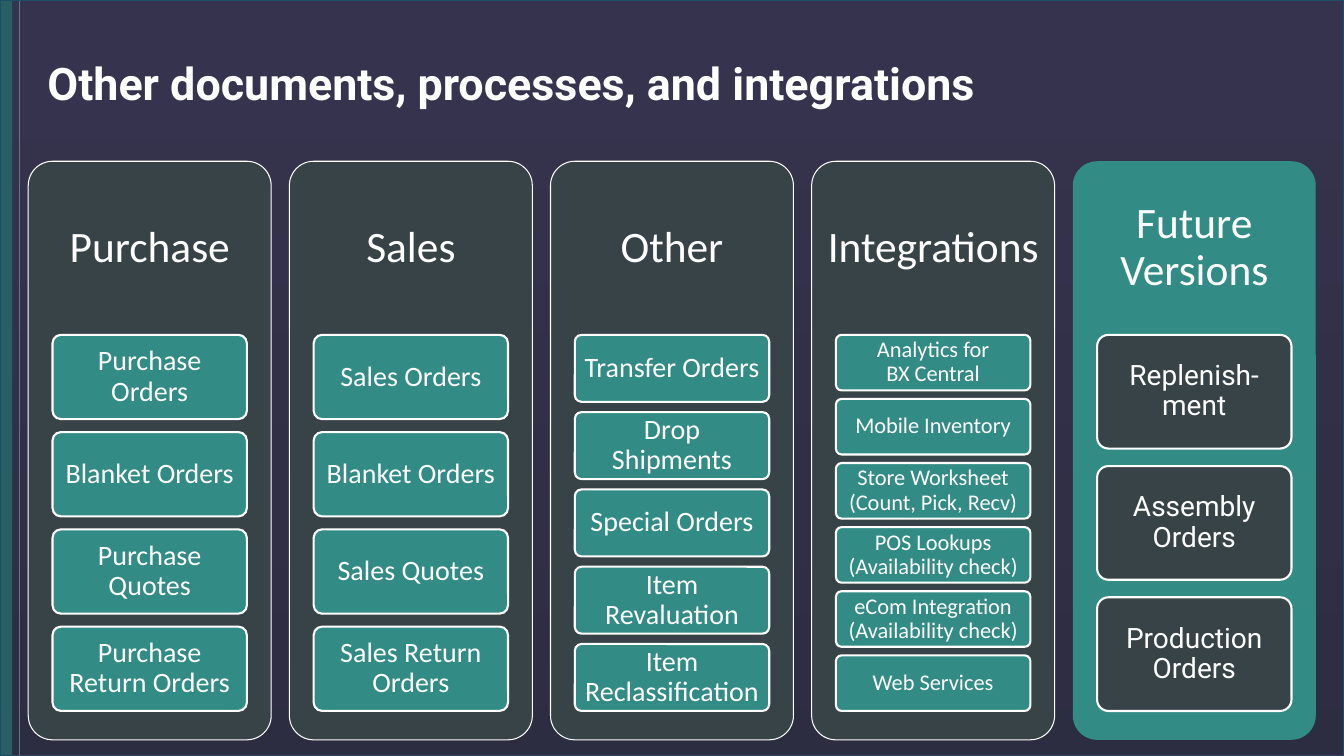
"""Build a slide of five panels listing documents, processes and integrations."""
import lxml.etree
import pptx
import pptx.dml.color
import pptx.enum.dml
import pptx.enum.shapes
import pptx.enum.text
import pptx.oxml.ns
import pptx.util

WIDTH, HEIGHT = 13.33, 7.5
PANEL_LEFT, PANEL_TOP, PANEL_WIDTH, PANEL_HEIGHT = 0.28, 1.6, 2.41, 5.74
PANEL_PITCH = 2.59
HEADING_SHARE = 0.3
STACK_SHARE = 0.65
CARD_SHARE = 0.8
CARD_GAP = 0.154
WHITE, SLATE, TEAL = "FFFFFF", "374347", "328C85"

PANELS = [
    ("Purchase", SLATE, TEAL, "Calibri", 20,
     ["Purchase Orders", "Blanket Orders", "Purchase Quotes",
      "Purchase Return Orders"]),
    ("Sales", SLATE, TEAL, "Calibri", 20,
     ["Sales Orders", "Blanket Orders", "Sales Quotes", "Sales Return Orders"]),
    ("Other", SLATE, TEAL, "Calibri", 20,
     ["Transfer Orders", "Drop Shipments", "Special Orders",
      "Item Revaluation", "Item Reclassification"]),
    ("Integrations", SLATE, TEAL, "Calibri", 16,
     ["Analytics for\vBX Central", "Mobile Inventory",
      "Store Worksheet\v(Count, Pick, Recv)",
      "POS Lookups (Availability check)",
      "eCom Integration (Availability check)", "Web Services"]),
    ("Future Versions", TEAL, SLATE, "Roboto", 20,
     ["Replenish-\vment", "Assembly Orders", "Production Orders"]),
]


def colour(code):
    """Return the colour for a hex string."""
    return pptx.dml.color.RGBColor.from_string(code)


def inches(*lengths):
    """Return the lengths given in inches as slide units."""
    return [pptx.util.Inches(length) for length in lengths]


def write(box, text, font, size, insets=(0.1, 0.05), centred=True, bold=False):
    """Write one white paragraph, centred on the height of a box."""
    frame = box.text_frame
    frame.text = text
    frame.word_wrap = True
    frame.auto_size = pptx.enum.text.MSO_AUTO_SIZE.NONE
    frame.vertical_anchor = pptx.enum.text.MSO_ANCHOR.MIDDLE
    frame.margin_left = frame.margin_right = pptx.util.Inches(insets[0])
    frame.margin_top = frame.margin_bottom = pptx.util.Inches(insets[1])
    para = frame.paragraphs[0]
    align = pptx.enum.text.PP_ALIGN
    para.alignment = align.CENTER if centred else align.LEFT
    para.line_spacing = 0.9
    for span in para.runs:
        span.font.name = font
        span.font.size = pptx.util.Pt(size)
        span.font.bold = bold
        span.font.color.rgb = colour(WHITE)


def add_block(page, place, fill, line=None, weight=1, rounded=True):
    """Add a filled rectangle, with rounded corners unless told otherwise."""
    kinds = pptx.enum.shapes.MSO_SHAPE
    kind = kinds.ROUNDED_RECTANGLE if rounded else kinds.RECTANGLE
    box = page.shapes.add_shape(kind, *inches(*place))
    box.shadow.inherit = False
    if rounded:
        box.adjustments[0] = 0.1
    box.fill.solid()
    box.fill.fore_color.rgb = colour(fill)
    if line:
        box.line.color.rgb = colour(line)
        box.line.width = pptx.util.Pt(weight)
    else:
        box.line.fill.background()
    return box


def add_backdrop(page):
    """Add the gradient, the left stripe and line, and the translucent veil."""
    fill = page.background.fill
    fill.gradient()
    fill.gradient_angle = 270
    for stop, code in zip(fill.gradient_stops, ("361D5C", "200C3B")):
        stop.color.rgb = colour(code)
    add_block(page, (0, 0, 0.12, HEIGHT), "138890", rounded=False)
    rule = page.shapes.add_connector(
        pptx.enum.shapes.MSO_CONNECTOR.STRAIGHT, *inches(0.19, 0, 0.19, HEIGHT))
    rule.line.color.rgb = colour("8ED6E7")
    rule.line.width = pptx.util.Pt(0.5)
    qn = pptx.oxml.ns.qn
    lxml.etree.SubElement(rule.element.spPr, qn("a:effectLst"))
    veil = add_block(page, (0, 0, WIDTH, HEIGHT), SLATE, "1D4E65", rounded=False)
    tint = veil.element.spPr.find(qn("a:solidFill")).find(qn("a:srgbClr"))
    lxml.etree.SubElement(tint, qn("a:alpha")).set("val", "60000")


def place_title(page, text):
    """Place the title in front of the backdrop and format it."""
    title = page.shapes.title
    title.element.getparent().append(title.element)
    title.left, title.top, title.width, title.height = inches(
        0.37, 0.53, 12.59, 0.64)
    write(title, text, "Roboto", 32, centred=False, bold=True)


def add_panel(page, column, heading, fill, card_fill, font, size, cards):
    """Add a panel with its heading and an evenly filled stack of cards."""
    left = PANEL_LEFT + column * PANEL_PITCH
    outline = WHITE if fill == SLATE else None
    add_block(page, (left, PANEL_TOP, PANEL_WIDTH, PANEL_HEIGHT),
              fill, outline, 0.75)
    heading_height = PANEL_HEIGHT * HEADING_SHARE
    label = page.shapes.add_textbox(
        *inches(left, PANEL_TOP, PANEL_WIDTH, heading_height))
    write(label, heading, "Calibri", 31, (0.13, 0.13))

    count = len(cards)
    height = PANEL_HEIGHT * STACK_SHARE / (count + CARD_GAP * (count - 1))
    card_left = left + PANEL_WIDTH * (1 - CARD_SHARE) / 2
    insets = (0.06, 0.04) if size == 20 else (0.04, 0.03)
    for row, text in enumerate(cards):
        top = PANEL_TOP + heading_height + row * height * (1 + CARD_GAP)
        card = add_block(page, (card_left, top, PANEL_WIDTH * CARD_SHARE, height),
                         card_fill, WHITE, 1.5)
        write(card, text, font, size, insets)


def main():
    """Build and save the deck."""
    deck = pptx.Presentation()
    deck.slide_width, deck.slide_height = inches(WIDTH, HEIGHT)
    page = deck.slides.add_slide(deck.slide_layouts.get_by_name("Title Only"))
    add_backdrop(page)
    place_title(page, "Other documents, processes, and integrations")
    for column, panel in enumerate(PANELS):
        add_panel(page, column, *panel)
    deck.save("out.pptx")


if __name__ == "__main__":
    main()
